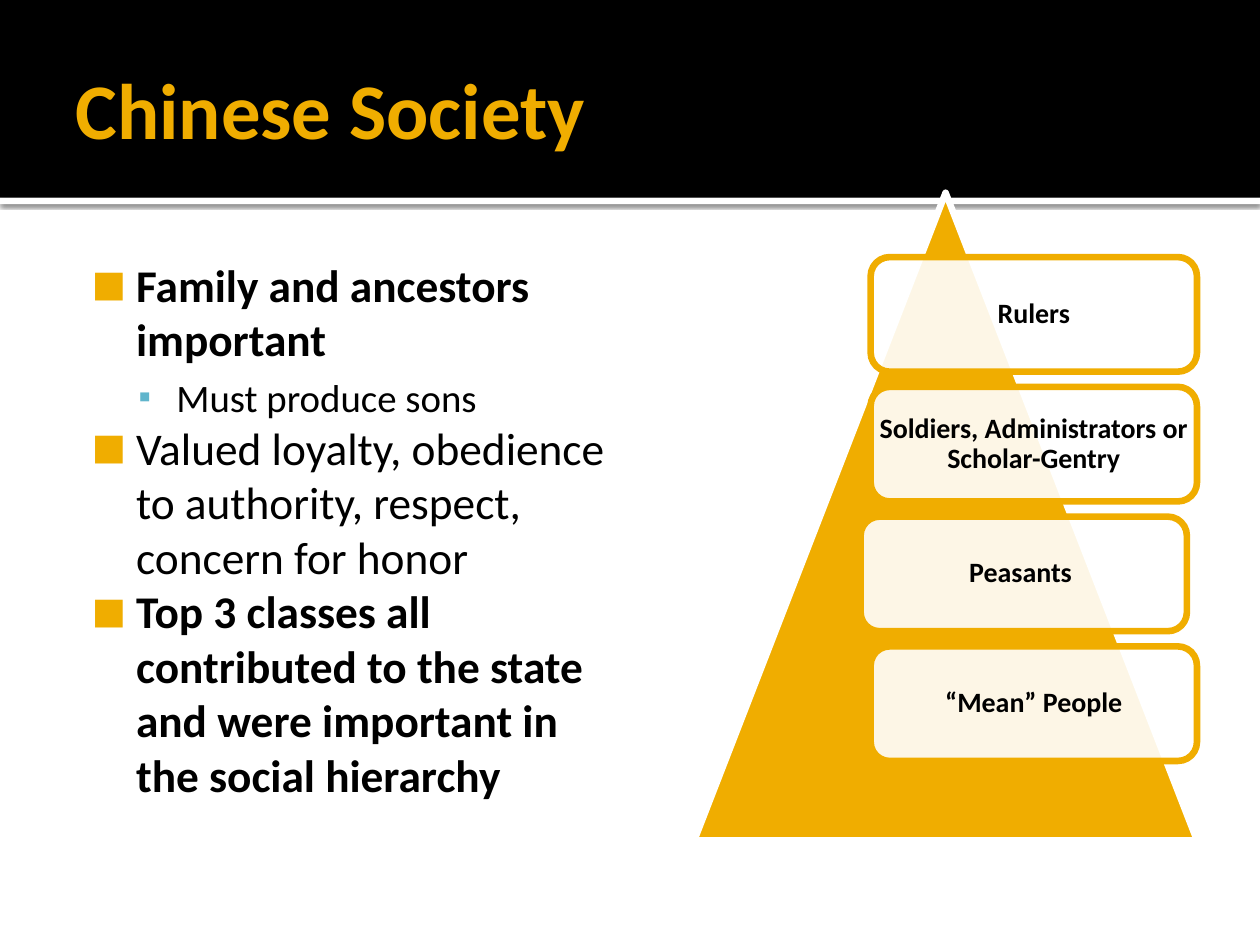
import dataclasses
import typing

import lxml.etree
import pptx
import pptx.dml.color
import pptx.enum.shapes
import pptx.enum.text
import pptx.oxml
import pptx.oxml.ns
import pptx.util

Inches = pptx.util.Inches
Pt = pptx.util.Pt
Color = pptx.dml.color.RGBColor
Kind = pptx.enum.shapes.MSO_SHAPE
Align = pptx.enum.text.PP_ALIGN
Anchor = pptx.enum.text.MSO_ANCHOR
qn = pptx.oxml.ns.qn


@dataclasses.dataclass(frozen=True)
class Theme:
    font: str = "Calibri"
    gold: str = "F0AD00"
    blue: str = "60B5CC"
    black: str = "000000"
    white: str = "FFFFFF"
    title: float = 45
    point: float = 25.9
    sub: float = 22.2
    label: float = 16
    line: float = 3.78


class Box(typing.NamedTuple):
    left: float
    top: float
    width: float
    height: float


class Point(typing.NamedTuple):
    text: str
    bold: bool = False
    level: int = 0


class Style(typing.NamedTuple):
    size: float
    mark: str
    color: str
    scale: int
    left: float
    hang: float
    before: float


THEME = Theme()
STYLES = (
    Style(THEME.point, "■", THEME.gold, 80, 0.48, 0.35, 0),
    Style(THEME.sub, "▪", THEME.blue, 90, 0.8, 0.3, 4.4),
)
POINTS = (
    Point("Family and ancestors important", bold=True),
    Point("Must produce sons", level=1),
    Point("Valued loyalty, obedience to authority, respect, concern for honor"),
    Point("Top 3 classes all contributed to the state and were important "
          "in the social hierarchy", bold=True),
)
RANKS = (
    ("Rulers", 6.91),
    ("Soldiers, Administrators or Scholar-Gentry", 6.91),
    ("Peasants ", 6.83),
    ("“Mean” People", 6.91),
)
RANK_TOP, RANK_STEP = 2.04, 1.03


def add_node(parent, tag: str, **attrs: typing.Any):
    return lxml.etree.SubElement(
        parent, qn(tag), {key: str(val) for key, val in attrs.items()})


def add_run(para, text: str, size: float, color: str, bold: bool) -> None:
    run = para.add_run()
    run.text = text
    font = run.font
    font.name, font.size, font.bold = THEME.font, Pt(size), bold
    font.color.rgb = Color.from_string(color)


def set_frame(frame, anchor, left: float, top: float, right: float, base: float) -> None:
    frame.word_wrap = True
    frame.auto_size = pptx.enum.text.MSO_AUTO_SIZE.NONE
    frame.vertical_anchor = anchor
    frame.margin_left, frame.margin_top = Inches(left), Inches(top)
    frame.margin_right, frame.margin_bottom = Inches(right), Inches(base)


def place(shape, box: Box) -> None:
    shape.left, shape.top, shape.width, shape.height = map(Inches, box)


def draw_shape(shapes, kind, box: Box, fill: str, line: str | None = None):
    shape = shapes.add_shape(kind, *map(Inches, box))
    shape.shadow.inherit = False
    shape.fill.solid()
    shape.fill.fore_color.rgb = Color.from_string(fill)
    if line:
        shape.line.color.rgb = Color.from_string(line)
        shape.line.width = Pt(THEME.line)
    else:
        shape.line.fill.background()
    return shape


def draw_bands(slide) -> None:
    """Draw the header band and its white rule behind the placeholders."""
    rule = draw_shape(slide.shapes, Kind.RECTANGLE, Box(0, 1.57, 10, 0.05), THEME.white)
    effects = rule._element.spPr.find(qn("a:effectLst"))
    shadow = add_node(effects, "a:outerShdw", blurRad=Pt(2.5), dist=Pt(0.8),
                      dir=90 * 60000, algn="tl", rotWithShape=0)
    tint = add_node(shadow, "a:srgbClr", val=THEME.black)
    add_node(tint, "a:alpha", val=60000)
    band = draw_shape(slide.shapes, Kind.RECTANGLE, Box(0, 0, 10, 1.57), THEME.black)
    for spot, shape in enumerate((rule, band), start=2):
        slide.shapes._spTree.insert(spot, shape._element)


def fill_title(shape) -> None:
    place(shape, Box(0.5, 0.17, 9, 1.37))
    set_frame(shape.text_frame, Anchor.MIDDLE, 0.1, 0.05, 0.05, 0.05)
    para = shape.text_frame.paragraphs[0]
    para.alignment = Align.LEFT
    add_run(para, "Chinese Society", THEME.title, THEME.gold, True)


def set_bullet(para, style: Style) -> None:
    props = para._p.get_or_add_pPr()
    props.set("marL", str(Inches(style.left)))
    props.set("indent", str(-Inches(style.hang)))
    tint = add_node(props, "a:buClr")
    add_node(tint, "a:srgbClr", val=style.color)
    add_node(props, "a:buSzPct", val=style.scale * 1000)
    add_node(props, "a:buFont", typeface=THEME.font)
    add_node(props, "a:buChar", char=style.mark)


def fill_body(shape) -> None:
    place(shape, Box(0.5, 1.94, 4.42, 5.06))
    frame = shape.text_frame
    set_frame(frame, Anchor.TOP, 0.1, 0.1, 0.1, 0.05)
    for index, point in enumerate(POINTS):
        para = frame.add_paragraph() if index else frame.paragraphs[0]
        style = STYLES[point.level]
        para.level = point.level
        para.space_before = Pt(style.before)
        set_bullet(para, style)
        add_run(para, point.text, style.size, THEME.black, point.bold)


def draw_rank(shapes, text: str, box: Box) -> None:
    card = draw_shape(shapes, Kind.ROUNDED_RECTANGLE, box, THEME.white, THEME.gold)
    tint = card._element.spPr.find(qn("a:solidFill"))[0]
    add_node(tint, "a:alpha", val=90000)
    set_frame(card.text_frame, Anchor.MIDDLE, 0.02, 0.02, 0.02, 0.02)
    para = card.text_frame.paragraphs[0]
    para.alignment = Align.CENTER
    para.line_spacing = 0.9
    add_run(para, text, THEME.label, THEME.black, True)


def draw_pyramid(slide) -> None:
    shapes = slide.shapes.add_group_shape().shapes
    draw_shape(shapes, Kind.ISOSCELES_TRIANGLE, Box(5.51, 1.53, 3.99, 5.14),
               THEME.gold, THEME.white)
    for row, (text, left) in enumerate(RANKS):
        draw_rank(shapes, text, Box(left, RANK_TOP + row * RANK_STEP, 2.59, 0.91))


def main() -> None:
    deck = pptx.Presentation()
    deck.slide_width, deck.slide_height = Inches(10), Inches(7.5)
    slide = deck.slides.add_slide(deck.slide_layouts[1])
    draw_bands(slide)
    fill_title(slide.shapes.title)
    fill_body(slide.placeholders[1])
    draw_pyramid(slide)
    deck.save("out.pptx")


if __name__ == "__main__":
    main()
